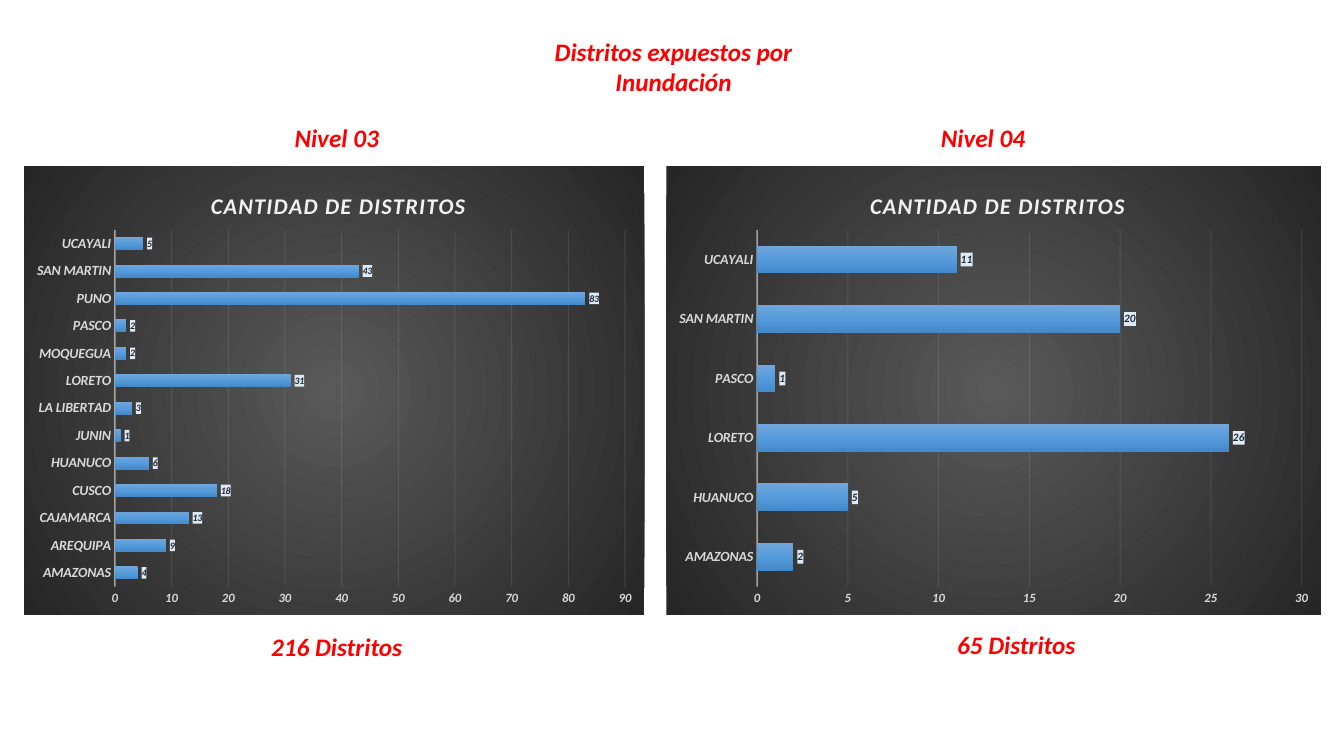
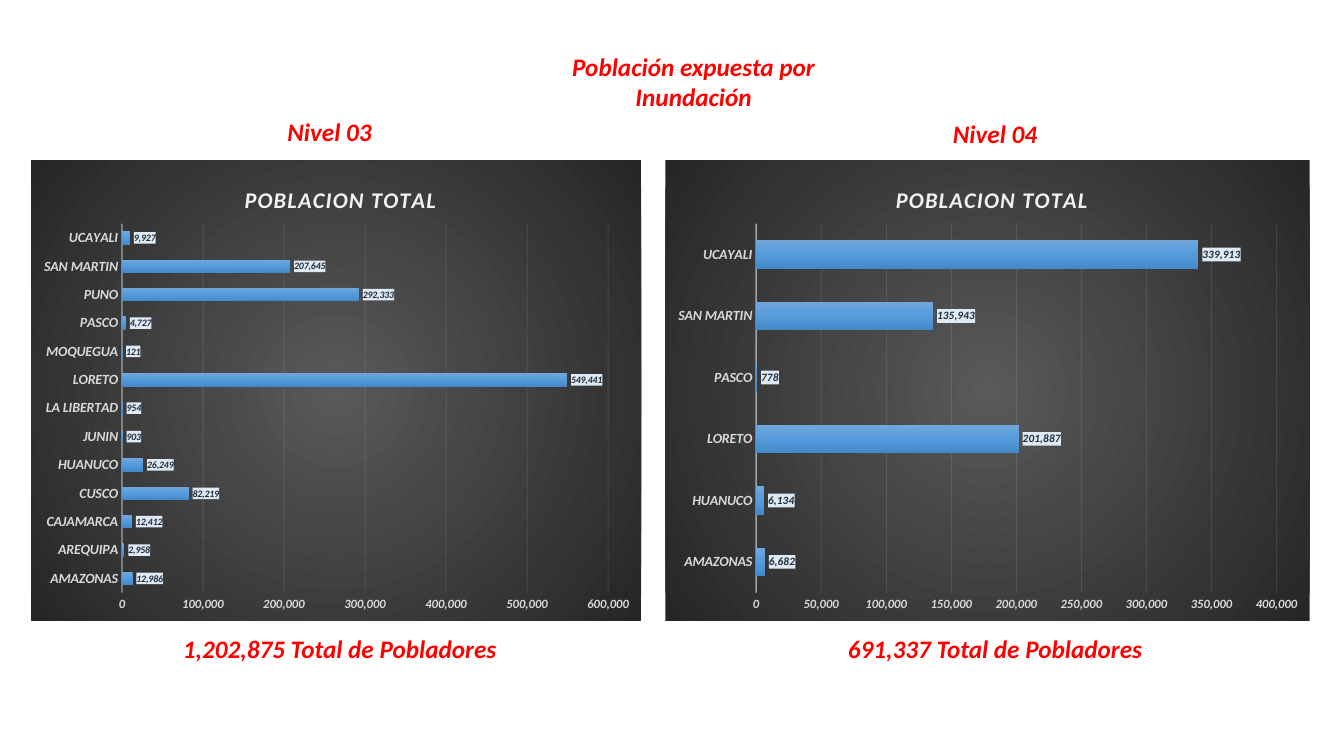
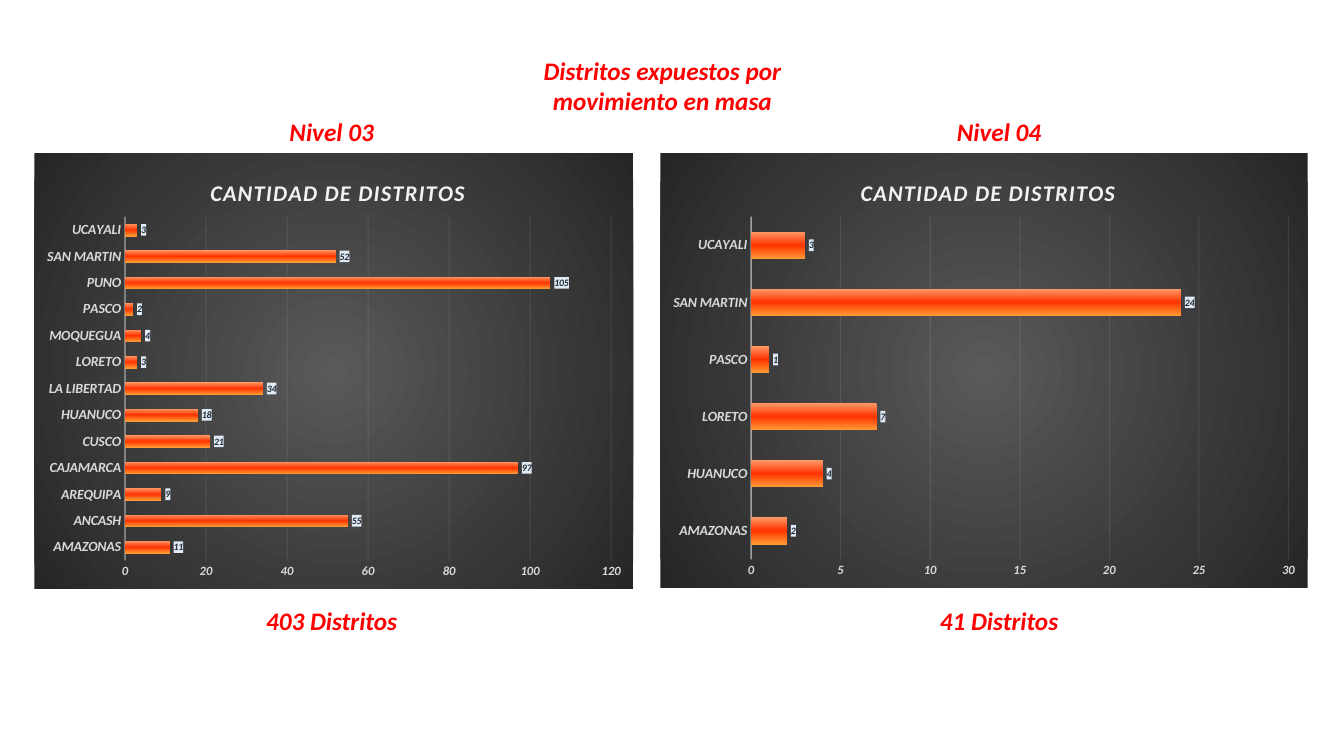
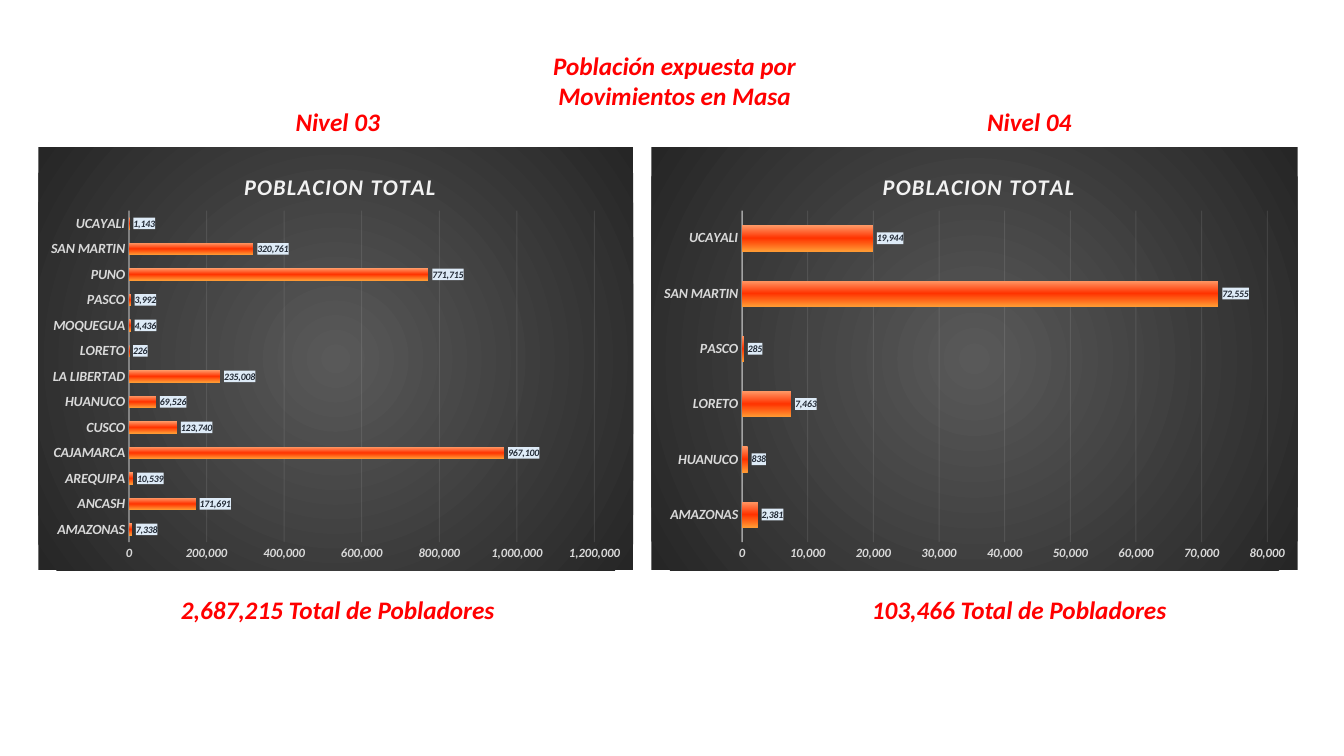
from dataclasses import dataclass

from lxml.etree import SubElement
from pptx import Presentation
from pptx.chart.data import CategoryChartData
from pptx.dml.color import RGBColor
from pptx.enum.chart import XL_CHART_TYPE as ChartType
from pptx.enum.chart import XL_LABEL_POSITION as LabelPosition
from pptx.enum.chart import XL_TICK_MARK as TickMark
from pptx.enum.text import MSO_AUTO_SIZE as AutoSize
from pptx.enum.text import PP_ALIGN as Align
from pptx.oxml.ns import qn
from pptx.util import Pt

# Scale: 100 px to the inch
PX = 9144
SLIDE_WIDTH, SLIDE_HEIGHT = 1333, 750

# Colours
RED = RGBColor(0xFF, 0x00, 0x00)
BLACK = RGBColor(0x00, 0x00, 0x00)
PALE = RGBColor(0xF2, 0xF2, 0xF2)
GREY = RGBColor(0xD9, 0xD9, 0xD9)
NAVY = RGBColor(0x22, 0x2A, 0x35)
LABEL_FILL = RGBColor(0xDE, 0xEB, 0xF7)
CHARCOAL = (RGBColor(0x59, 0x59, 0x59), RGBColor(0x26, 0x26, 0x26))
BLUE_BARS = (RGBColor(0x71, 0xA6, 0xDB), RGBColor(0x55, 0x9B, 0xDB),
             RGBColor(0x44, 0x8A, 0xCA))
ORANGE_BARS = (RGBColor(0xFF, 0x99, 0x66), RGBColor(0xFF, 0x33, 0x00),
               RGBColor(0xFF, 0x99, 0x33))

# Text and chart measures
FONT = "Calibri"
NUMBER_FORMAT = "#,##0"
CAPTION_WIDTH, CAPTION_HEIGHT = 340, 40
PLOT_LEFT, PLOT_TOP, PLOT_BOTTOM = 90, 63, 28
TITLE_TOP = 20
TITLE_WIDTHS = {"CANTIDAD DE DISTRITOS": 253, "POBLACION TOTAL": 190}

# Regions, from the bottom bar upwards
FLOOD_REGIONS = ["AMAZONAS", "AREQUIPA", "CAJAMARCA", "CUSCO", "HUANUCO",
                 "JUNIN", "LA LIBERTAD", "LORETO", "MOQUEGUA", "PASCO",
                 "PUNO", "SAN MARTIN", "UCAYALI"]
LANDSLIDE_REGIONS = ["AMAZONAS", "ANCASH", "AREQUIPA", "CAJAMARCA", "CUSCO",
                     "HUANUCO", "LA LIBERTAD", "LORETO", "MOQUEGUA", "PASCO",
                     "PUNO", "SAN MARTIN", "UCAYALI"]
SEVERE_REGIONS = ["AMAZONAS", "HUANUCO", "LORETO", "PASCO", "SAN MARTIN",
                  "UCAYALI"]


@dataclass
class Panel:
    """One chart with the level above it and the total below it."""
    level: str
    level_at: tuple      # centre, top
    total: str
    total_at: tuple      # centre, top
    chart_box: tuple     # left, top, width, height
    regions: list
    values: list
    axis_max: int
    axis_step: int
    label_size: int = 7


@dataclass
class Page:
    heading: str
    heading_at: tuple    # centre, top
    chart_title: str
    bar_colors: tuple
    panels: list


PAGES = [
    Page("Distritos expuestos por Inundación", (668, 31),
         "CANTIDAD DE DISTRITOS", BLUE_BARS, [
             Panel("Nivel 03", (334, 116), "216 Distritos", (334, 621),
                   (24, 165, 615, 445), FLOOD_REGIONS,
                   [4, 9, 13, 18, 6, 1, 3, 31, 2, 2, 83, 43, 5], 90, 10),
             Panel("Nivel 04", (975, 116), "65 Distritos", (1008, 619),
                   (661, 165, 649, 445), SEVERE_REGIONS,
                   [2, 5, 26, 1, 20, 11], 30, 5, 8)]),
    Page("Población expuesta por Inundación", (688, 46),
         "POBLACION TOTAL", BLUE_BARS, [
             Panel("Nivel 03", (327, 111),
                   "1,202,875 Total de Pobladores", (337, 623),
                   (31, 159, 605, 457), FLOOD_REGIONS,
                   [12986, 2958, 12412, 82219, 26249, 903, 954, 549441, 121,
                    4727, 292333, 207645, 9927], 600000, 100000),
             Panel("Nivel 04", (987, 112),
                   "691,337 Total de Pobladores", (987, 623),
                   (660, 159, 639, 457), SEVERE_REGIONS,
                   [6682, 6134, 201887, 778, 135943, 339913],
                   400000, 50000, 8)]),
    Page("Distritos expuestos por movimiento en masa", (657, 50),
         "CANTIDAD DE DISTRITOS", ORANGE_BARS, [
             Panel("Nivel 03", (329, 111), "403 Distritos", (329, 596),
                   (34, 152, 594, 432), LANDSLIDE_REGIONS,
                   [11, 55, 9, 97, 21, 18, 34, 3, 4, 2, 105, 52, 3], 120, 20),
             Panel("Nivel 04", (991, 111), "41 Distritos", (991, 596),
                   (655, 152, 642, 431), SEVERE_REGIONS,
                   [2, 4, 7, 1, 24, 3], 30, 5)]),
    Page("Población expuesta por Movimientos en Masa", (669, 45),
         "POBLACION TOTAL", ORANGE_BARS, [
             Panel("Nivel 03", (335, 101),
                   "2,687,215 Total de Pobladores", (335, 585),
                   (38, 146, 590, 420), LANDSLIDE_REGIONS,
                   [7338, 171691, 10539, 967100, 123740, 69526, 235008, 226,
                    4436, 3992, 771715, 320761, 1143], 1200000, 200000),
             Panel("Nivel 04", (1021, 101),
                   "103,466 Total de Pobladores", (1011, 585),
                   (646, 146, 641, 420), SEVERE_REGIONS,
                   [2381, 838, 7463, 285, 72555, 19944], 80000, 10000)]),
]


# XML helpers
def add_gradient(properties, colors, radial=False):
    gradient = SubElement(properties, qn("a:gradFill"), rotWithShape="1")
    stops = SubElement(gradient, qn("a:gsLst"))
    for index, color in enumerate(colors):
        position = index * 100000 // (len(colors) - 1)
        stop = SubElement(stops, qn("a:gs"), pos=str(position))
        SubElement(stop, qn("a:srgbClr"), val=str(color))
    if radial:
        path = SubElement(gradient, qn("a:path"), path="circle")
        SubElement(path, qn("a:fillToRect"),
                   {side: "50000" for side in "ltrb"})
    else:
        SubElement(gradient, qn("a:lin"), ang="5400000", scaled="0")


def set_layout(parent, index, places, inner=False):
    """Place a chart part by fractions of the chart's size."""
    for old in parent.findall(qn("c:layout")):
        parent.remove(old)
    layout = SubElement(parent, qn("c:layout"))
    manual = SubElement(layout, qn("c:manualLayout"))
    if inner:
        SubElement(manual, qn("c:layoutTarget"), val="inner")
    for name in "xy":
        SubElement(manual, qn(f"c:{name}Mode"), val="edge")
    for name, value in places.items():
        SubElement(manual, qn(f"c:{name}"), val=f"{value:.4f}")
    parent.insert(index, layout)


def style_line(chart_format, width, opacity):
    line = chart_format.line
    line.color.rgb = PALE
    line.width = Pt(width)
    color = next(line.fill._xPr.iter(qn("a:srgbClr")))
    SubElement(color, qn("a:alpha"), val=str(opacity * 1000))


class Deck:
    """Holds the shared style and the current slide."""

    def __init__(self):
        self.presentation = Presentation()
        self.presentation.slide_width = SLIDE_WIDTH * PX
        self.presentation.slide_height = SLIDE_HEIGHT * PX
        self.slide = None

    def add_slide(self):
        blank = self.presentation.slide_layouts[6]
        self.slide = self.presentation.slides.add_slide(blank)

    def style_font(self, font, size, color, bold=True, italic=True):
        values = {"name": FONT, "size": Pt(size), "bold": bold,
                  "italic": italic}
        for name, value in values.items():
            setattr(font, name, value)
        font.color.rgb = color

    def add_caption(self, text, center, top, wrap=True):
        left = center - CAPTION_WIDTH // 2
        box = self.slide.shapes.add_textbox(
            left * PX, top * PX, CAPTION_WIDTH * PX, CAPTION_HEIGHT * PX)
        frame = box.text_frame
        frame.word_wrap = wrap
        frame.auto_size = AutoSize.SHAPE_TO_FIT_TEXT
        paragraph = frame.paragraphs[0]
        paragraph.alignment = Align.CENTER
        run = paragraph.add_run()
        run.text = text
        self.style_font(run.font, 18, RED)

    def add_bar_chart(self, panel, title, colors):
        data = CategoryChartData(number_format=NUMBER_FORMAT)
        data.categories = panel.regions
        data.add_series("Series 1", panel.values)
        box = [length * PX for length in panel.chart_box]
        chart = self.slide.shapes.add_chart(
            ChartType.BAR_CLUSTERED, *box, data).chart
        chart.has_legend = False
        self.style_font(chart.font, 10, BLACK, False, False)

        # Dark background
        chart_space = chart._chartSpace
        background = SubElement(chart_space, qn("c:spPr"))
        add_gradient(background, CHARCOAL, radial=True)
        chart_space.find(qn("c:chart")).addnext(background)

        self.style_chart_title(chart, title, panel)
        self.style_axes(chart, panel)
        self.style_bars(chart.plots[0], colors, panel.label_size)

    def style_chart_title(self, chart, text, panel):
        chart.has_title = True
        run = chart.chart_title.text_frame.paragraphs[0].add_run()
        run.text = text
        self.style_font(run.font, 16, PALE)
        run.font._rPr.set("spc", "100")
        _, _, width, height = panel.chart_box
        set_layout(chart.chart_title._element, 1, {
            "x": 0.5 - TITLE_WIDTHS[text] / 2 / width,
            "y": TITLE_TOP / height})

    def style_axes(self, chart, panel):
        regions, amounts = chart.category_axis, chart.value_axis
        for axis, size in ((regions, 10), (amounts, 9)):
            axis.major_tick_mark = axis.minor_tick_mark = TickMark.NONE
            self.style_font(axis.tick_labels.font, size, GREY)
        style_line(regions.format, 1, 54)
        style_line(amounts.major_gridlines.format, 0.75, 10)
        amounts.format.line.fill.background()
        amounts.tick_labels.number_format = NUMBER_FORMAT
        amounts.tick_labels.number_format_is_linked = False
        amounts.minimum_scale = 0
        amounts.maximum_scale = panel.axis_max
        amounts.major_unit = panel.axis_step

        # The right margin leaves room for the last axis number
        _, _, width, height = panel.chart_box
        plot_right = 13.5 + 2.75 * len(f"{panel.axis_max:,}")
        plot_area = chart._chartSpace.chart.plotArea
        set_layout(plot_area, 0, {
            "x": PLOT_LEFT / width,
            "y": PLOT_TOP / height,
            "w": (width - PLOT_LEFT - plot_right) / width,
            "h": (height - PLOT_TOP - PLOT_BOTTOM) / height}, inner=True)

    def style_bars(self, plot, colors, label_size):
        plot.gap_width = 115
        plot.overlap = -20
        plot.vary_by_categories = False
        series = plot.series[0]
        series.invert_if_negative = False
        add_gradient(series._element.get_or_add_spPr(), colors)

        # Value labels on a light box
        labels = series.data_labels
        values = {"show_value": True, "number_format": NUMBER_FORMAT,
                  "number_format_is_linked": False,
                  "position": LabelPosition.OUTSIDE_END}
        for name, value in values.items():
            setattr(labels, name, value)
        self.style_font(labels.font, label_size, NAVY)
        element = labels._element
        label_box = SubElement(element, qn("c:spPr"))
        fill = SubElement(label_box, qn("a:solidFill"))
        SubElement(fill, qn("a:srgbClr"), val=str(LABEL_FILL))
        element.find(qn("c:txPr")).addprevious(label_box)


def main():
    deck = Deck()
    for page in PAGES:
        deck.add_slide()
        deck.add_caption(page.heading, *page.heading_at, wrap=False)
        for panel in page.panels:
            deck.add_caption(panel.level, *panel.level_at)
            deck.add_caption(panel.total, *panel.total_at)
            deck.add_bar_chart(panel, page.chart_title, page.bar_colors)
    deck.presentation.save("out.pptx")


if __name__ == "__main__":
    main()
